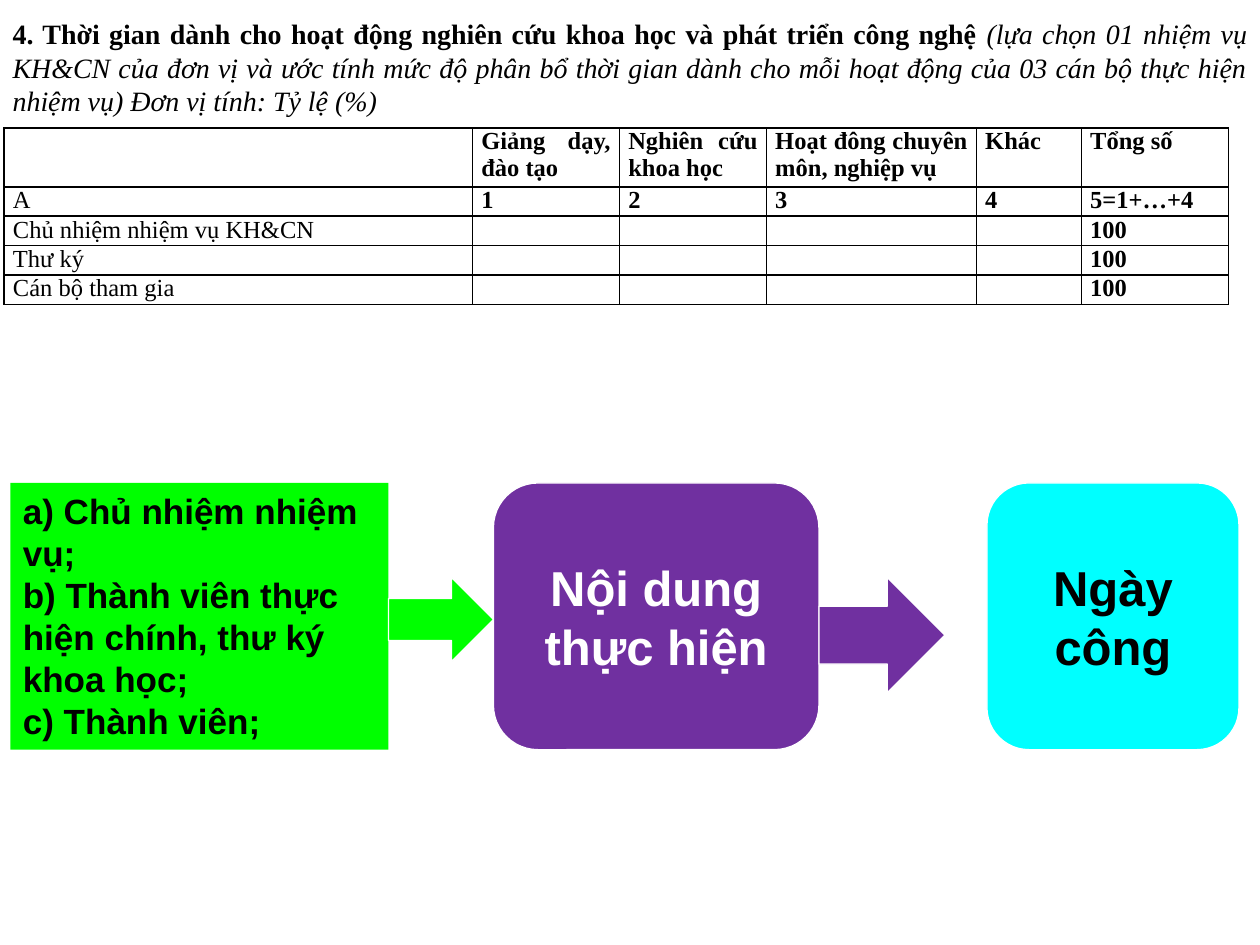
from dataclasses import dataclass
from typing import Optional

from lxml import etree
from pptx import Presentation
from pptx import util as u
from pptx.dml.color import RGBColor
from pptx.enum import shapes, text
from pptx.oxml import ns


@dataclass(frozen=True)
class Theme:
    black: str = "000000"
    white: str = "FFFFFF"
    green: str = "00FF00"
    purple: str = "7030A0"
    cyan: str = "00FFFF"
    serif: str = "Times New Roman"
    sans: str = "Arial"
    heading: int = 16
    grid: int = 14
    roles: int = 20
    step: int = 28


@dataclass(frozen=True)
class Area:
    col: float
    row: float
    cols: float
    rows: float

    def emu(self) -> tuple:
        return (columns(self.col), rows(self.row), columns(self.cols), rows(self.rows))


@dataclass(frozen=True)
class Block:
    area: Area
    preset: shapes.MSO_SHAPE
    fill: str
    outline: Optional[str] = None
    lines: tuple = ()
    size: int = 28
    ink: str = "000000"
    align: text.PP_ALIGN = text.PP_ALIGN.CENTER
    anchor: text.MSO_ANCHOR = text.MSO_ANCHOR.MIDDLE


THEME = Theme()
WIDTH, HEIGHT = u.Inches(10), u.Inches(7.5)
GRID_COLUMNS, GRID_ROWS = 12, 9

HEADING = (
    ("4. Thời gian dành cho hoạt động nghiên cứu khoa học và phát triển công nghệ ", True),
    ("(lựa chọn 01 nhiệm vụ KH&CN của đơn vị và ước tính mức độ phân bổ thời gian dành cho "
     "mỗi hoạt động của 03 cán bộ thực hiện nhiệm vụ) Đơn vị tính: Tỷ lệ (%)", False),
)
HEADING_AREA = Area(0, 0.1, 12, 1.09)

STAFF = ("Chủ nhiệm nhiệm vụ KH&CN", "Thư ký", "Cán bộ tham gia")
TIME_ROWS = [
    ("", "Giảng dạy, đào tạo", "Nghiên cứu khoa học", "Hoạt đông chuyên môn, nghiệp vụ",
     "Khác", "Tổng số"),
    ("A", "1", "2", "3", "4", "5=1+…+4"),
    *((person, "", "", "", "", "100") for person in STAFF),
]
TIME_COLUMNS = (4.46, 1.4, 1.4, 2, 1, 1.4)
TIME_HEIGHTS = (0.56,) + (0.28,) * 4
TIME_AREA = Area(0.04, 1.22, sum(TIME_COLUMNS), sum(TIME_HEIGHTS))

FLOW_TOP, FLOW_ROWS, ARROW_TOP = 4.6, 2.54, 5.5
PRESET = shapes.MSO_SHAPE
FLOW = (
    Block(Area(0.1, FLOW_TOP, 3.6, FLOW_ROWS), PRESET.RECTANGLE, THEME.green,
          lines=("a) Chủ nhiệm nhiệm vụ;", "b) Thành viên thực hiện chính, thư ký khoa học;",
                 "c) Thành viên;"),
          size=THEME.roles, align=text.PP_ALIGN.LEFT, anchor=text.MSO_ANCHOR.TOP),
    Block(Area(4.7, FLOW_TOP, 3.1, FLOW_ROWS), PRESET.ROUNDED_RECTANGLE, THEME.purple,
          THEME.white, ("Nội dung thực hiện",), THEME.step, THEME.white),
    Block(Area(9.4, FLOW_TOP, 2.4, FLOW_ROWS), PRESET.ROUNDED_RECTANGLE, THEME.cyan,
          THEME.white, ("Ngày công",), THEME.step, THEME.black),
    Block(Area(3.7, ARROW_TOP, 1, 0.8), PRESET.RIGHT_ARROW, THEME.green, THEME.white),
    Block(Area(7.8, ARROW_TOP, 1.2, 1.1), PRESET.RIGHT_ARROW, THEME.purple, THEME.white),
)


def columns(count: float) -> int:
    return round(WIDTH * count / GRID_COLUMNS)


def rows(count: float) -> int:
    return round(HEIGHT * count / GRID_ROWS)


def style(paragraph, face: str, size: int, ink: str, align, bold: Optional[bool] = None) -> None:
    paragraph.alignment = align
    font = paragraph.font
    font.name, font.size, font.bold = face, u.Pt(size), bold
    font.color.rgb = RGBColor.from_string(ink)


def draw_heading(slide) -> None:
    heading = slide.shapes.title
    heading.left, heading.top, heading.width, heading.height = HEADING_AREA.emu()
    frame = heading.text_frame
    frame.word_wrap = True
    frame.auto_size = text.MSO_AUTO_SIZE.NONE
    frame.vertical_anchor = text.MSO_ANCHOR.TOP
    paragraph = frame.paragraphs[0]
    style(paragraph, THEME.serif, THEME.heading, THEME.black, text.PP_ALIGN.JUSTIFY)
    paragraph.space_before = u.Pt(6)
    for wording, strong in HEADING:
        run = paragraph.add_run()
        run.text = wording
        run.font.bold, run.font.italic = strong, not strong


def add_borders(cell) -> None:
    properties = cell._tc.get_or_add_tcPr()
    for side in ("lnL", "lnR", "lnT", "lnB"):
        border = etree.SubElement(properties, ns.qn(f"a:{side}"), w=str(u.Pt(1)))
        fill = etree.SubElement(border, ns.qn("a:solidFill"))
        etree.SubElement(fill, ns.qn("a:srgbClr"), val=THEME.black)


def draw_cell(cell, wording: str, bold: bool) -> None:
    add_borders(cell)
    cell.fill.background()
    cell.margin_left = cell.margin_right = u.Inches(0.07)
    cell.margin_top = cell.margin_bottom = 0
    cell.text = wording
    paragraph = cell.text_frame.paragraphs[0]
    style(paragraph, THEME.serif, THEME.grid, THEME.black, text.PP_ALIGN.JUSTIFY, bold)
    paragraph.space_before = paragraph.space_after = u.Pt(2)


def draw_time_table(slide) -> None:
    table = slide.shapes.add_table(len(TIME_ROWS), len(TIME_COLUMNS), *TIME_AREA.emu()).table
    table.first_row = table.horz_banding = False
    for column, share in zip(table.columns, TIME_COLUMNS):
        column.width = columns(share)
    for row, share, wordings in zip(table.rows, TIME_HEIGHTS, TIME_ROWS):
        row.height = rows(share)
        for index, (cell, wording) in enumerate(zip(row.cells, wordings)):
            draw_cell(cell, wording, bold=index > 0)


def draw_block(slide, block: Block) -> None:
    shape = slide.shapes.add_shape(block.preset, *block.area.emu())
    shape.shadow.inherit = False
    shape.fill.solid()
    shape.fill.fore_color.rgb = RGBColor.from_string(block.fill)
    if block.outline:
        shape.line.color.rgb = RGBColor.from_string(block.outline)
        shape.line.width = u.Pt(0.75)
    else:
        shape.line.fill.background()
    if not block.lines:
        return
    frame = shape.text_frame
    frame.word_wrap = True
    frame.vertical_anchor = block.anchor
    frame.text = "\n".join(block.lines)
    for paragraph in frame.paragraphs:
        style(paragraph, THEME.sans, block.size, block.ink, block.align, True)


def main() -> None:
    deck = Presentation()
    deck.slide_width, deck.slide_height = WIDTH, HEIGHT
    slide = deck.slides.add_slide(deck.slide_layouts.get_by_name("Title Only"))
    draw_heading(slide)
    draw_time_table(slide)
    for block in FLOW:
        draw_block(slide, block)
    deck.save("out.pptx")


if __name__ == "__main__":
    main()
